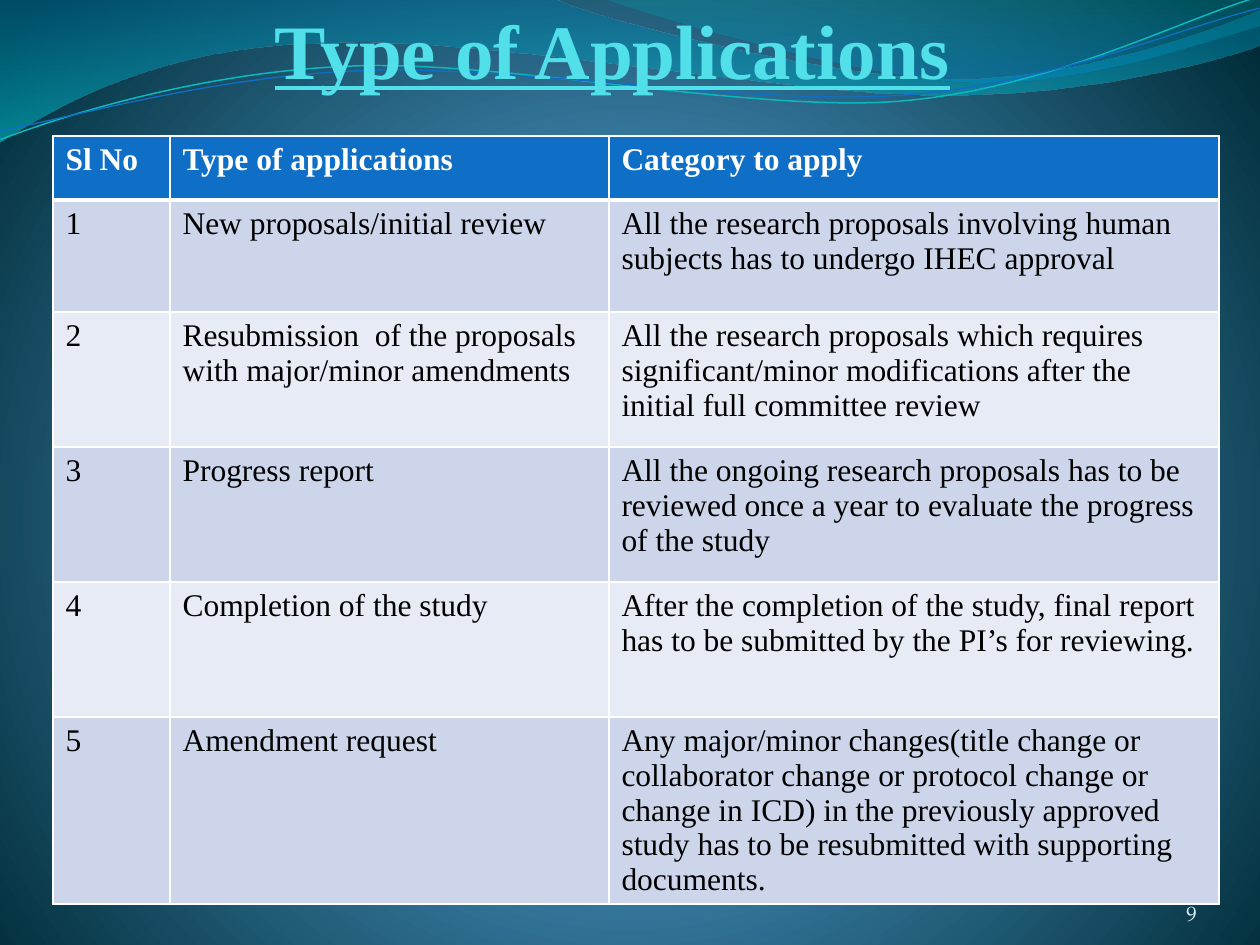
"""Build the slide that lists the types of applications."""
import pptx
import pptx.dml.color
import pptx.enum.text
import pptx.oxml
import pptx.oxml.ns
import pptx.util


class Theme:
    serif, number = "Times New Roman", "TeX Gyre Pagella"
    white, black = "FFFFFF", "000000"
    title, page = "51E0EA", "D1EAEE"
    head, bands = "0F6FC6", ("CCD5EA", "E7EBF5")
    back = ((0, "4AA0D6", 100), (25, "4C98C7", 100), (100, "002C38", 100))
    wave = ((0, "0074A1", 45), (100, "00C6CF", 55))
    crest = ((0, "00A1A9", 30), (80, "008BBF", 45))
    teal, blue = "0AB8BF", "0F6FC6"
    big, body, small = 44, 18, 12


PX = 914400 / 126
TILT = 357.3
RGB = pptx.dml.color.RGBColor.from_string
NS = pptx.oxml.ns.nsdecls("a")
QN = pptx.oxml.ns.qn
ALIGN = pptx.enum.text.PP_ALIGN
ANCHOR = pptx.enum.text.MSO_ANCHOR


def shade(node, stops, tail):
    old = node.find(".//" + QN("a:gradFill"))
    marks = "".join(
        f'<a:gs pos="{pos * 1000}"><a:srgbClr val="{tone}">'
        + (f'<a:alpha val="{alpha * 1000}"/>' if alpha < 100 else "")
        + '</a:srgbClr></a:gs>'
        for pos, tone, alpha in stops)
    new = pptx.oxml.parse_xml(
        f'<a:gradFill {NS} rotWithShape="1"><a:gsLst>{marks}</a:gsLst>{tail}</a:gradFill>')
    old.getparent().replace(old, new)


def write(frame, text, look, align=ALIGN.LEFT):
    para = frame.paragraphs[0]
    para.alignment = align
    run = para.add_run()
    run.text = text
    for key, value in look.items():
        if key == "color":
            run.font.color.rgb = RGB(value)
        else:
            setattr(run.font, key, value)


deck = pptx.Presentation()
deck.slide_width, deck.slide_height = int(1260 * PX), int(945 * PX)
slide = deck.slides.add_slide(deck.slide_layouts[5])

slide.background.fill.gradient()
shade(slide.element, Theme.back,
      '<a:path path="circle"><a:fillToRect l="10000" t="110000" r="10000" b="100000"/></a:path>')

waves = [
    (Theme.wave, None, 0, [
        (0, 0), (554, -1), (600, 21, 837, 79, 955, 79), (1075, 79, 1207, 33, 1260, 11),
        (1261, 45), (1239, 55, 1096, 96, 940, 95), (784, 95, 481, 35, 324, 43),
        (163, 45, 58, 105, -1, 142)]),
    (Theme.crest, None, 0, [
        (604, -1), (641, 14, 859, 78, 969, 82), (1079, 87, 1211, 40, 1260, 26), (1260, 0)]),
    (None, Theme.teal, 0.85, [
        (-2, 110), (58, 90, 199, 52, 350, 53), (499, 53, 745, 118, 896, 114),
        (1049, 109, 1184, 45, 1260, 27)]),
    (None, Theme.blue, 0.75, [
        (-2, 101), (57, 94, 207, 57, 357, 58), (509, 58, 750, 112, 902, 108),
        (1052, 104, 1187, 52, 1262, 38)]),
]
for stops, tone, width, parts in waves:
    spots = [spot for part in parts for spot in zip(part[::2], part[1::2])]
    pen = slide.shapes.build_freeform(*spots[0], scale=PX)
    pen.add_line_segments(spots[1:], close=stops is not None)
    wave = pen.convert_to_shape()
    wave.shadow.inherit = False
    legs = iter(wave.element.findall(".//" + QN("a:lnTo")))
    for part in parts[1:]:
        leg = next(legs)
        if len(part) == 6:
            bend = pptx.oxml.parse_xml(f"<a:cubicBezTo {NS}/>")
            leg.getparent().replace(leg, bend)
            for step in (leg, next(legs), next(legs)):
                bend.append(step[0])
                if step is not leg:
                    step.getparent().remove(step)
    if stops:
        wave.fill.gradient()
        shade(wave.element, stops, '<a:lin ang="5400000" scaled="0"/>')
        wave.line.fill.background()
    else:
        wave.rotation = TILT
        wave.fill.background()
        wave.line.color.rgb = RGB(tone)
        wave.line.width = pptx.util.Pt(width)

title = slide.shapes.title
title.element.getparent().append(title.element)
page = slide.shapes.add_textbox(0, 0, 0, 0)
labels = [
    (title, (73, 32, 1082, 63), 3, "Type of Applications", ALIGN.CENTER,
     {"name": Theme.serif, "size": pptx.util.Pt(Theme.big), "color": Theme.title,
      "bold": True, "underline": True}),
    (page, (1092, 876, 105, 50), 0, "9", ALIGN.RIGHT,
     {"name": Theme.number, "size": pptx.util.Pt(Theme.small), "color": Theme.page}),
]
for shape, box, inset, text, align, look in labels:
    for key, value in zip(("left", "top", "width", "height"), box):
        setattr(shape, key, int(value * PX))
    frame = shape.text_frame
    form = {"margin_left": 0, "margin_top": 0, "margin_right": int(inset * PX),
            "margin_bottom": 0, "word_wrap": True, "vertical_anchor": ANCHOR.BOTTOM,
            "auto_size": pptx.enum.text.MSO_AUTO_SIZE.NONE}
    for key, value in form.items():
        setattr(frame, key, value)
    write(frame, text, look, align)

rows = [
    ("Sl No", "Type of applications", "Category to apply"),
    ("1", "New proposals/initial review",
     "All the research proposals involving human subjects has to undergo IHEC approval"),
    ("2", "Resubmission  of the proposals with major/minor amendments",
     "All the research proposals which requires significant/minor modifications "
     "after the initial full committee review"),
    ("3", "Progress report",
     "All the ongoing research proposals has to be reviewed once a year "
     "to evaluate the progress of the study"),
    ("4", "Completion of the study",
     "After the completion of the study, final report has to be submitted "
     "by the PI’s for reviewing."),
    ("5", "Amendment request",
     "Any major/minor changes(title change or collaborator change or protocol change "
     "or change in ICD) in the previously approved study has to be resubmitted "
     "with supporting documents."),
]
wide, high = (117, 439, 610), (64, 112, 135, 135, 135, 175)
table = slide.shapes.add_table(
    len(rows), len(wide), int(53 * PX), int(136 * PX),
    int(sum(wide) * PX), int(sum(high) * PX)).table
for col, size in zip(table.columns, wide):
    col.width = int(size * PX)
for r, (row, size) in enumerate(zip(rows, high)):
    table.rows[r].height = int(size * PX)
    head = r == 0
    look = {"name": Theme.serif, "size": pptx.util.Pt(Theme.body), "bold": head,
            "color": Theme.white if head else Theme.black}
    for c, text in enumerate(row):
        cell = table.cell(r, c)
        cell.fill.solid()
        cell.fill.fore_color.rgb = RGB(Theme.head if head else Theme.bands[(r - 1) % 2])
        write(cell.text_frame, text, look)
        edges = {"L": 1, "R": 1, "T": 3 if r == 1 else 1, "B": 3 if head else 1}
        for i, (side, width) in enumerate(edges.items()):
            cell._tc.get_or_add_tcPr().insert(i, pptx.oxml.parse_xml(
                f'<a:ln{side} {NS} w="{width * 12700}"><a:solidFill>'
                f'<a:srgbClr val="{Theme.white}"/></a:solidFill></a:ln{side}>'))

deck.save("out.pptx")
